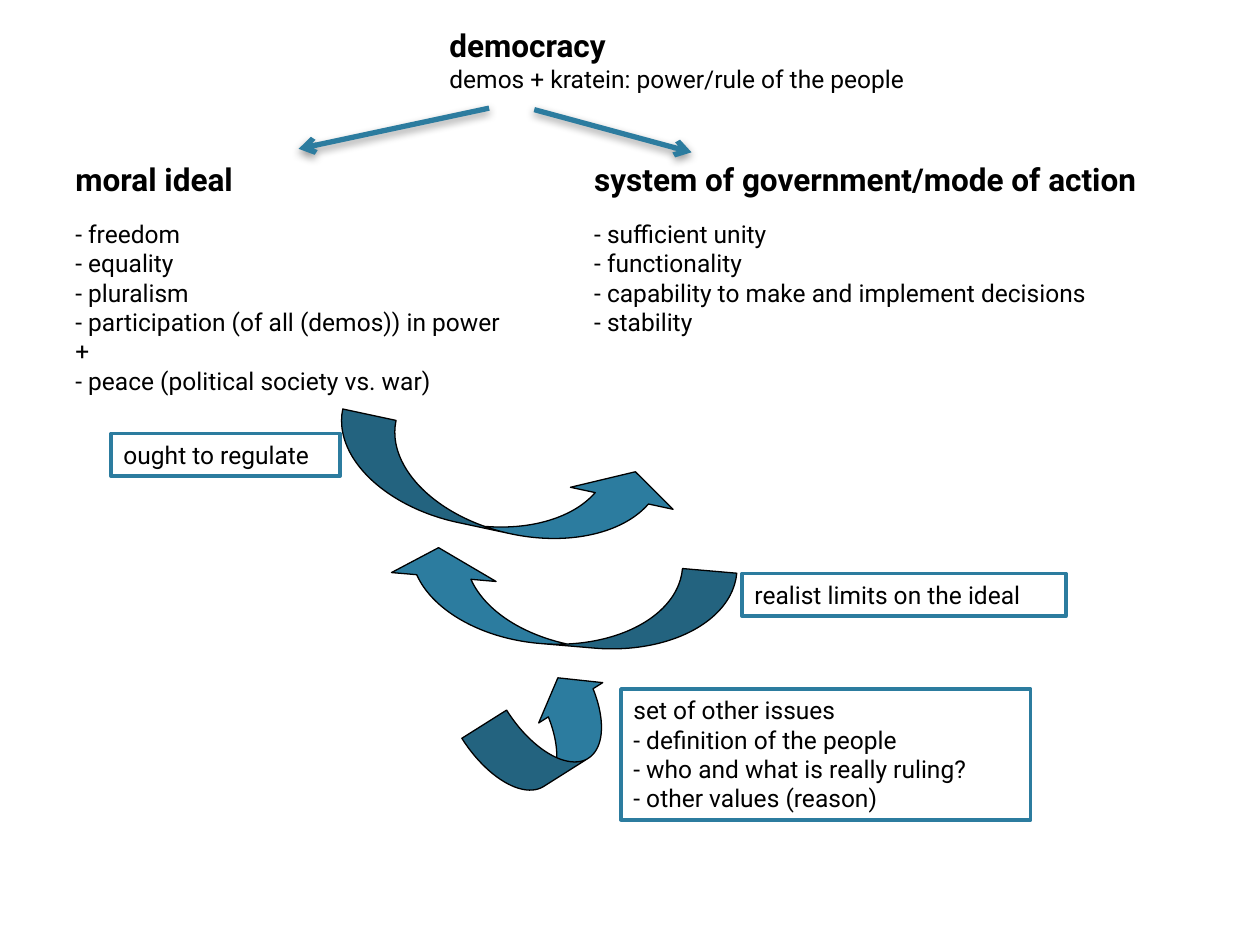
from dataclasses import dataclass

from lxml.etree import SubElement
from pptx import Presentation
from pptx.dml.color import RGBColor
from pptx.enum.shapes import MSO_CONNECTOR as Link, MSO_SHAPE as Kind
from pptx.enum.text import MSO_ANCHOR as Anchor, MSO_AUTO_SIZE as Fit, PP_ALIGN as Align
from pptx.oxml.ns import qn
from pptx.shapes.shapetree import SlideShapes
from pptx.text.text import TextFrame
from pptx.util import Cm, Pt

BLACK = RGBColor(0x00, 0x00, 0x00)
WHITE = RGBColor(0xFF, 0xFF, 0xFF)
TEAL = RGBColor(0x2C, 0x7C, 0x9F)
FONT = "Roboto"
BEND = (0.627, 1.209, 0.332)


@dataclass
class Area:
    left: float
    top: float
    width: float
    height: float

    def cm(self) -> list[Cm]:
        return [Cm(v) for v in (self.left, self.top, self.width, self.height)]


@dataclass
class Topic:
    area: Area
    head: str
    lines: list[str]
    gap: int = 0


@dataclass
class Branch:
    start: tuple[float, float]
    end: tuple[float, float]


@dataclass
class Force:
    """A curved arrow and the box that names it."""
    curve: Area
    turn: float
    box: Area
    lines: list[str]
    flip: bool = False


TOPICS = [
    Topic(Area(8.81, 0.41, 10.52, 1.63), "democracy",
          ["demos + kratein: power/rule of the people"]),
    Topic(Area(1.27, 3.1, 10.06, 5.05), "moral ideal",
          ["- freedom", "- equality", "- pluralism",
           "- participation (of all (demos)) in power", "+",
           "- peace (political society vs. war)"], 12),
    Topic(Area(11.73, 3.1, 12.65, 3.84), "system of government/mode of action",
          ["- sufficient unity", "- functionality",
           "- capability to make and implement decisions", "- stability"], 12),
]
BRANCHES = [
    Branch((9.86, 2.18), (6.02, 3.0)),
    Branch((10.77, 2.21), (13.94, 3.07)),
]
FORCES = [
    Force(Area(6.65, 8.97, 7.09, 1.75), 12.1,
          Area(2.24, 8.74, 4.62, 0.86), ["ought to regulate"]),
    Force(Area(7.7, 11.25, 7.09, 1.75), 4.9,
          Area(14.96, 11.56, 6.53, 0.86), ["realist limits on the ideal"], True),
    Force(Area(9.53, 13.94, 3.05, 1.7), 327.8,
          Area(12.52, 13.89, 8.26, 2.64),
          ["set of other issues", "- definition of the people",
           "- who and what is really ruling?", "- other values (reason)"]),
]


def write(frame: TextFrame, lines: list[str]) -> None:
    frame.word_wrap = True
    frame.auto_size = Fit.SHAPE_TO_FIT_TEXT
    frame.vertical_anchor = Anchor.TOP
    for i, line in enumerate(lines):
        par = frame.paragraphs[0] if i == 0 else frame.add_paragraph()
        par.text = line
        par.alignment = Align.LEFT
        par.font.name = FONT
        par.font.size = Pt(14)
        par.font.color.rgb = BLACK


def draw_topic(shapes: SlideShapes, topic: Topic) -> None:
    frame = shapes.add_textbox(*topic.area.cm()).text_frame
    write(frame, [topic.head, *topic.lines])
    head = frame.paragraphs[0]
    head.font.size = Pt(18)
    head.font.bold = True
    head.space_after = Pt(topic.gap)


def draw_branch(shapes: SlideShapes, branch: Branch) -> None:
    ends = [Cm(v) for v in branch.start + branch.end]
    link = shapes.add_connector(Link.STRAIGHT, *ends)
    link.line.color.rgb = TEAL
    link.line.width = Pt(3)
    SubElement(link.line._get_or_add_ln(), qn("a:tailEnd"), type="arrow")
    effects = SubElement(link._element.spPr, qn("a:effectLst"))
    shade = SubElement(effects, qn("a:outerShdw"), blurRad=str(Pt(5)),
                       dist=str(Pt(2)), dir="5400000", rotWithShape="0")
    color = SubElement(shade, qn("a:srgbClr"), val=str(BLACK))
    SubElement(color, qn("a:alpha"), val="40000")


def draw_force(shapes: SlideShapes, force: Force) -> None:
    curve = shapes.add_shape(Kind.CURVED_UP_ARROW, *force.curve.cm())
    for i, value in enumerate(BEND):
        curve.adjustments[i] = value
    curve.rotation = force.turn
    if force.flip:
        curve._element.spPr.find(qn("a:xfrm")).set("flipH", "1")
    box = shapes.add_shape(Kind.RECTANGLE, *force.box.cm())
    write(box.text_frame, force.lines)
    for shape, fill, edge, width in ((curve, TEAL, BLACK, 0.75), (box, WHITE, TEAL, 2)):
        shape.shadow.inherit = False
        shape.fill.solid()
        shape.fill.fore_color.rgb = fill
        shape.line.color.rgb = edge
        shape.line.width = Pt(width)


def main() -> None:
    deck = Presentation()
    deck.slide_width, deck.slide_height = Cm(25.4), Cm(19.05)
    shapes = deck.slides.add_slide(deck.slide_layouts[6]).shapes
    for topic in TOPICS:
        draw_topic(shapes, topic)
    for branch in BRANCHES:
        draw_branch(shapes, branch)
    for force in FORCES:
        draw_force(shapes, force)
    deck.save("out.pptx")


if __name__ == "__main__":
    main()
